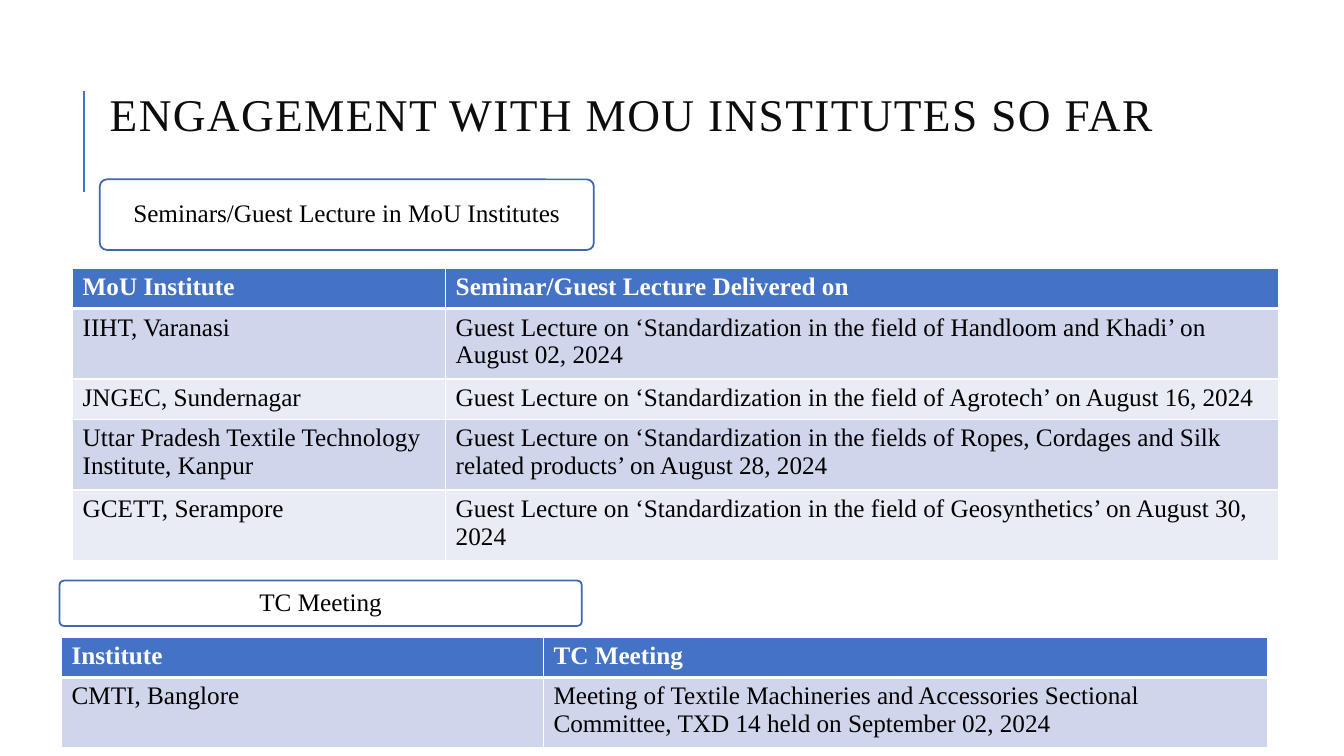
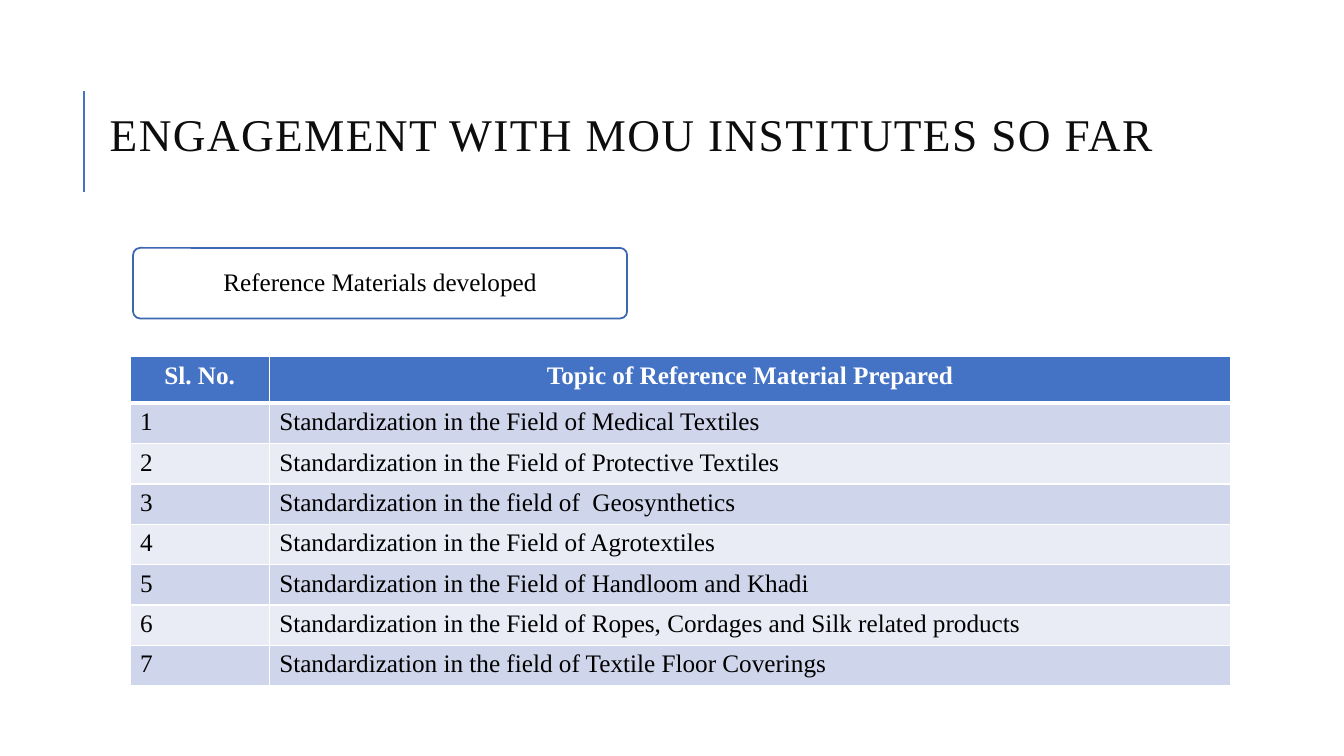
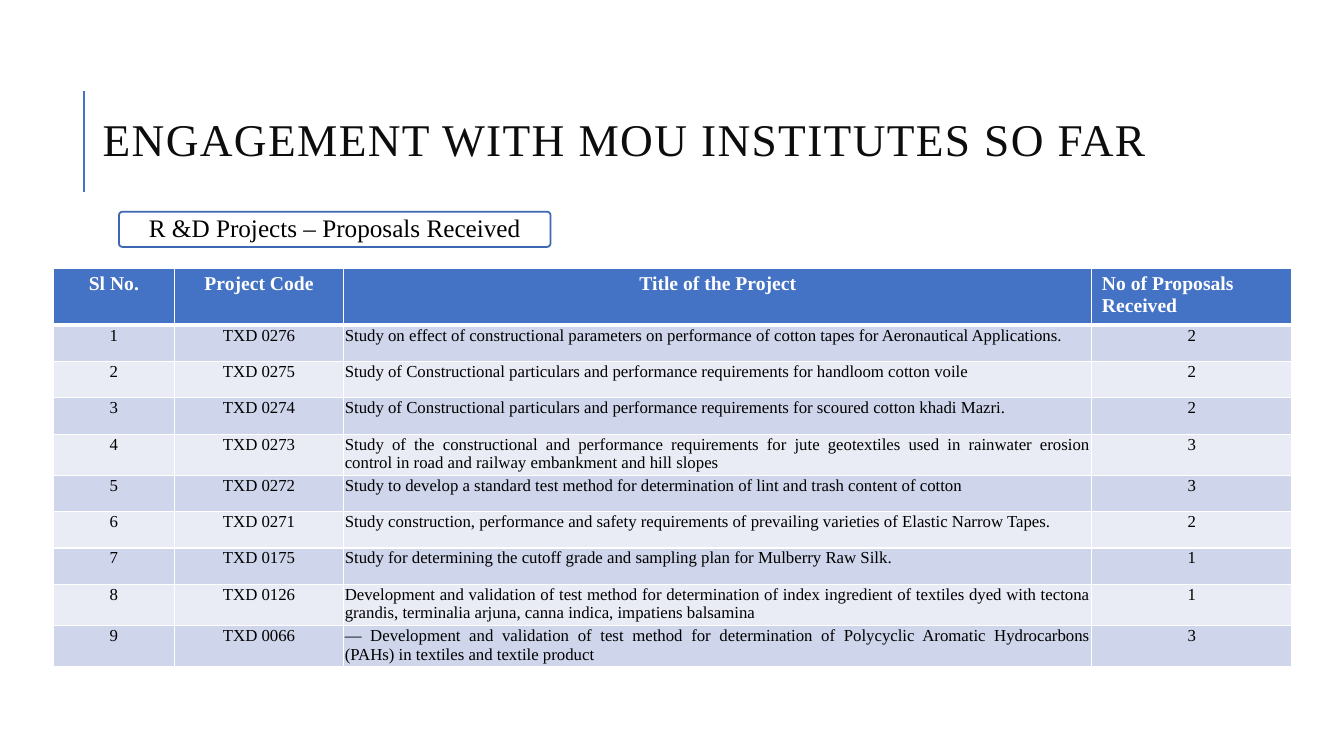
from lxml import etree
from pptx import Presentation
from pptx.dml.color import RGBColor as RGB
from pptx.enum.shapes import MSO_CONNECTOR as LINE, MSO_SHAPE as SHAPE
from pptx.enum.text import MSO_ANCHOR as ANCHOR, PP_ALIGN as ALIGN
from pptx.oxml import parse_xml
from pptx.oxml.ns import nsdecls, qn
from pptx.util import Inches, Pt

INK = {
    "head": "4472C4", "edge": "3E67B2", "odd": "CFD5EA", "even": "E9EBF5",
    "title": "0D0D0D", "text": "000000", "white": "FFFFFF",
}
FONT = "Times New Roman"
TITLE = "ENGAGEMENT WITH MOU INSTITUTES SO FAR"
SIDES = {"l": ALIGN.LEFT, "c": ALIGN.CENTER, "j": ALIGN.JUSTIFY}


def write(frame, text, size=18, ink="text", bold=False, side="l", space=None, track=None):
    frame.word_wrap = True
    par = frame.paragraphs[0]
    par.alignment = SIDES[side]
    if space:
        par.line_spacing = space
    run = par.add_run()
    run.text = text
    run.font.name = FONT
    run.font.size = Pt(size)
    run.font.bold = bold
    run.font.color.rgb = RGB.from_string(INK[ink])
    if track:
        run.font._element.set("spc", str(track * 100))


def paint(cell, fill, base):
    cell.fill.solid()
    cell.fill.fore_color.rgb = RGB.from_string(INK[fill])
    props = cell._tc.get_or_add_tcPr()
    widths = {"lnL": 1, "lnR": 1, "lnT": 1, "lnB": base}
    for spot, (tag, width) in enumerate(widths.items()):
        props.insert(spot, parse_xml(
            f'<a:{tag} {nsdecls("a")} w="{Pt(width)}"><a:solidFill>'
            f'<a:srgbClr val="{INK["white"]}"/></a:solidFill></a:{tag}>'))


talks = {
    "at": (0.72, 2.66), "cols": (3.7, 8.26), "rows": (0.37, 0.65, 0.38, 0.65, 0.65),
    "head": "ll", "body": "ll", "sizes": (18, 18), "pad": None,
    "data": [
        ("MoU Institute", "Seminar/Guest Lecture Delivered on"),
        ("IIHT, Varanasi",
         "Guest Lecture on ‘Standardization in the field of Handloom and Khadi’ on August 02, 2024"),
        ("JNGEC, Sundernagar",
         "Guest Lecture on ‘Standardization in the field of Agrotech’ on August 16, 2024"),
        ("Uttar Pradesh Textile Technology Institute, Kanpur",
         "Guest Lecture on ‘Standardization in the fields of Ropes, Cordages and Silk related products’ on August 28, 2024"),
        ("GCETT, Serampore",
         "Guest Lecture on ‘Standardization in the field of Geosynthetics’ on August 30, 2024"),
    ],
}
meets = {
    "at": (0.61, 6.32), "cols": (4.78, 7.18), "rows": (0.37, 0.65),
    "head": "ll", "body": "ll", "sizes": (18, 18), "pad": None,
    "data": [
        ("Institute", "TC Meeting"),
        ("CMTI, Banglore",
         "Meeting of Textile Machineries and Accessories Sectional Committee, TXD 14 held on September 02, 2024"),
    ],
}
topics = [
    "Field of Medical Textiles",
    "Field of Protective Textiles",
    "field of  Geosynthetics",
    "Field of Agrotextiles",
    "Field of Handloom and Khadi",
    "Field of Ropes, Cordages and Silk related products",
    "field of Textile Floor Coverings",
]
papers = {
    "at": (1.29, 3.54), "cols": (1.38, 9.54), "rows": [0.46] + [0.38] * len(topics),
    "head": "cc", "body": "ll", "sizes": (18, 18), "pad": None,
    "data": [("Sl. No.", "Topic of Reference Material Prepared")] + [
        (str(num), f"Standardization in the {topic}") for num, topic in enumerate(topics, 1)],
}
plans = [
    ("0276", "Study on effect of constructional parameters on performance of cotton tapes for Aeronautical Applications.", 2),
    ("0275", "Study of Constructional particulars and performance requirements for handloom cotton voile", 2),
    ("0274", "Study of Constructional particulars and performance requirements for scoured cotton khadi Mazri.", 2),
    ("0273", "Study of the constructional and performance requirements for jute geotextiles used in rainwater erosion control in road and railway embankment and hill slopes", 3),
    ("0272", "Study to develop a standard test method for determination of lint and trash content of cotton", 3),
    ("0271", "Study construction, performance and safety requirements of prevailing varieties of Elastic Narrow Tapes.", 2),
    ("0175", "Study for determining the cutoff grade and sampling plan for Mulberry Raw Silk.", 1),
    ("0126", "Development and validation of test method for determination of index ingredient of textiles dyed with tectona grandis, terminalia arjuna, canna indica, impatiens balsamina", 1),
    ("0066", "— Development and validation of test method for determination of Polycyclic Aromatic Hydrocarbons (PAHs) in textiles and textile product", 3),
]
works = {
    "at": (0.53, 2.66), "cols": (1.2, 1.68, 7.42, 1.98), "rows": [0.53] + [0.36] * len(plans),
    "head": "cccl", "body": "ccjc", "sizes": (14, 12), "pad": (0.01, 0.01, 0.01, 0),
    "data": [("Sl No.", "Project Code", "Title of the Project", "No of Proposals Received")] + [
        (str(num), f"TXD {code}", name, str(count))
        for num, (code, name, count) in enumerate(plans, 1)],
}

pages = [
    ((0.99, 0.76), [
        ("Seminars/Guest Lecture in MoU Institutes", (0.99, 1.78, 4.9, 0.7)),
        ("TC Meeting", (0.59, 5.76, 5.18, 0.45)),
    ], [talks, meets]),
    ((0.99, 0.95), [("Reference Materials developed", (1.32, 2.46, 4.9, 0.7))], [papers]),
    ((0.92, 1), [("R &D Projects – Proposals Received", (1.18, 2.1, 4.28, 0.35))], [works]),
]

deck = Presentation()
deck.slide_width = Inches(13.33)
deck.slide_height = Inches(7.5)

for (left, top), labels, grids in pages:
    slide = deck.slides.add_slide(deck.slide_layouts[6])
    shapes = slide.shapes

    rule = shapes.add_connector(
        LINE.STRAIGHT, Inches(0.83), Inches(1.9), Inches(0.83), Inches(0.9))
    rule.line.color.rgb = RGB.from_string(INK["head"])
    rule.line.width = Pt(1.5)
    etree.SubElement(rule._element.spPr, qn("a:effectLst"))

    title = shapes.add_textbox(Inches(left), Inches(top), Inches(11.5), Inches(0.84))
    title.text_frame.vertical_anchor = ANCHOR.MIDDLE
    write(title.text_frame, TITLE, size=32.4, ink="title", space=0.8, track=1)

    for text, box in labels:
        label = shapes.add_shape(SHAPE.ROUNDED_RECTANGLE, *map(Inches, box))
        label.adjustments[0] = 0.1
        label.shadow.inherit = False
        label.fill.solid()
        label.fill.fore_color.rgb = RGB.from_string(INK["white"])
        label.line.color.rgb = RGB.from_string(INK["edge"])
        label.line.width = Pt(1.25)
        frame = label.text_frame
        frame.vertical_anchor = ANCHOR.MIDDLE
        frame.margin_left = frame.margin_right = Inches(0.07)
        frame.margin_top = frame.margin_bottom = Inches(0.07)
        write(frame, text, side="c", space=0.9)

    for grid in grids:
        data, cols, rows = grid["data"], grid["cols"], grid["rows"]
        size = (*grid["at"], sum(cols), sum(rows))
        table = shapes.add_table(len(rows), len(cols), *map(Inches, size)).table
        for col, width in zip(table.columns, cols):
            col.width = Inches(width)
        for r, (line, height) in enumerate(zip(data, rows)):
            table.rows[r].height = Inches(height)
            first = r == 0
            fill = "head" if first else "odd" if r % 2 else "even"
            sides = grid["head"] if first else grid["body"]
            for c, text in enumerate(line):
                cell = table.cell(r, c)
                paint(cell, fill, 3 if first else 1)
                if grid["pad"] and not first:
                    (cell.margin_left, cell.margin_top,
                     cell.margin_right, cell.margin_bottom) = map(Inches, grid["pad"])
                write(cell.text_frame, text, size=grid["sizes"][not first],
                      ink="white" if first else "text", bold=first, side=sides[c])

deck.save("out.pptx")
